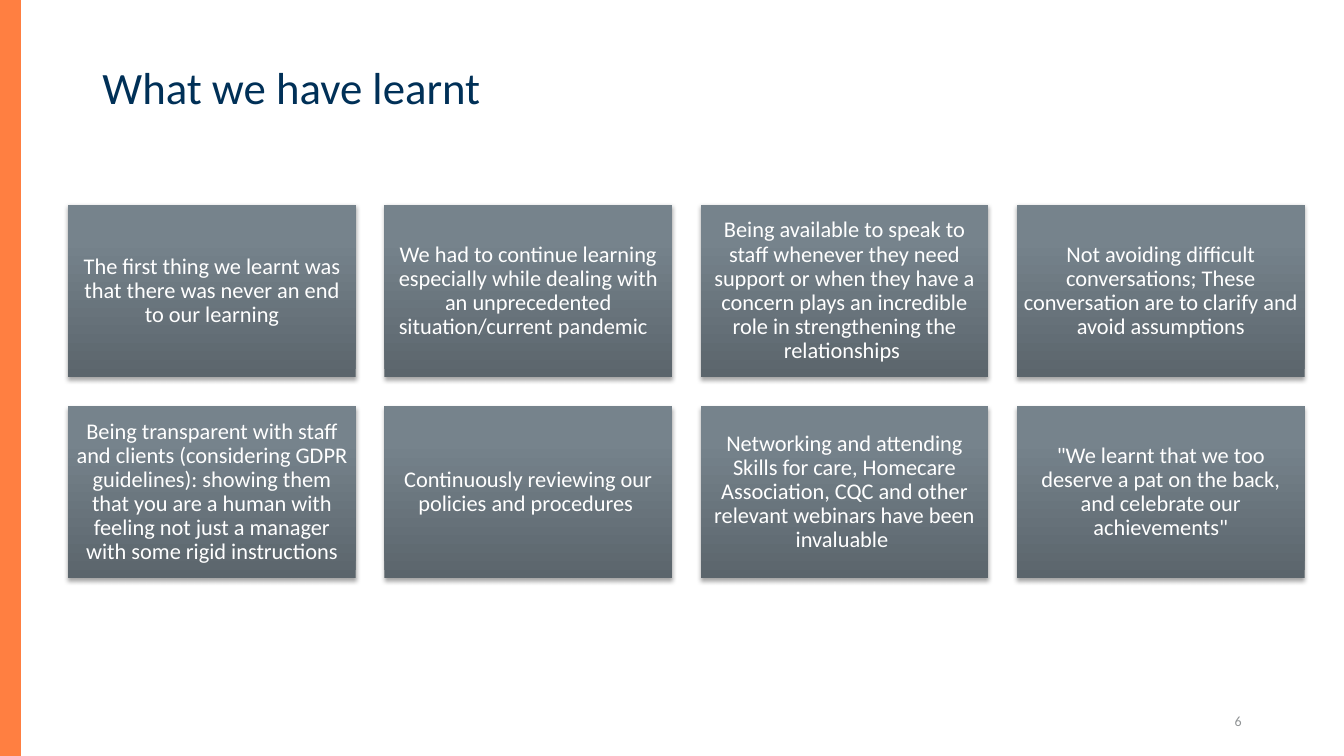
import dataclasses
import pptx
import pptx.dml.color
import pptx.enum.shapes
import pptx.enum.text
import pptx.oxml
import pptx.oxml.ns
import pptx.util

Pt = pptx.util.Pt
RGB = pptx.dml.color.RGBColor.from_string
ALIGN = pptx.enum.text.PP_ALIGN
MIDDLE = pptx.enum.text.MSO_ANCHOR.MIDDLE
RECTANGLE = pptx.enum.shapes.MSO_SHAPE.RECTANGLE


@dataclasses.dataclass(frozen=True)
class Theme:
    font: str = "Calibri"
    accent: str = "FF7F41"
    title: str = "003057"
    number: str = "909395"
    card_text: str = "FFFFFF"
    card_bottom: str = "5B656C"
    card_top: str = "76838C"
    shadow: str = "000000"
    title_size: int = 32
    card_size: int = 16
    number_size: int = 10


theme = Theme()


def write(box, text, size, color, alignment, line_spacing=None):
    frame = box.text_frame
    frame.word_wrap = True
    frame.vertical_anchor = MIDDLE
    frame.text = text
    para = frame.paragraphs[0]
    para.alignment = alignment
    para.line_spacing = line_spacing
    para.font.name = theme.font
    para.font.size = Pt(size)
    para.font.color.rgb = RGB(color)


def add_shadow(shape):
    shape.shadow.inherit = False
    effects = shape._element.spPr.find(pptx.oxml.ns.qn("a:effectLst"))
    effects.append(pptx.oxml.parse_xml(
        f'<a:outerShdw {pptx.oxml.ns.nsdecls("a")} blurRad="{Pt(3.1)}" '
        f'dist="{Pt(1.8)}" dir="5400000" rotWithShape="0">'
        f'<a:srgbClr val="{theme.shadow}"><a:alpha val="35000"/></a:srgbClr>'
        '</a:outerShdw>'))


deck = pptx.Presentation()
deck.slide_width, deck.slide_height = Pt(960), Pt(540)
page = deck.slides.add_slide(deck.slide_layouts[5])

bar = page.shapes.add_shape(RECTANGLE, Pt(0), Pt(0), Pt(15), Pt(540))
bar.shadow.inherit = False
bar.fill.solid()
bar.fill.fore_color.rgb = RGB(theme.accent)
bar.line.fill.background()

title = page.shapes.title
title.left, title.top, title.width, title.height = Pt(66), Pt(28.75), Pt(828), Pt(71)
write(title, "What we have learnt ", theme.title_size, theme.title, ALIGN.LEFT, 0.9)

number = page.shapes.add_textbox(Pt(678), Pt(500.5), Pt(216), Pt(28.75))
write(number, "6", theme.number_size, theme.number, ALIGN.RIGHT)
number.text_frame.paragraphs[0].space_after = Pt(6)

lessons = [
    "The first thing we learnt was that there was never an end to our learning",
    "We had to continue learning especially while dealing with an unprecedented "
    "situation/current pandemic  ",
    "Being available to speak to staff whenever they need support or when they have "
    "a concern plays an incredible role in strengthening the relationships ",
    "Not avoiding difficult conversations; These conversation are to clarify and "
    "avoid assumptions",
    "Being transparent with staff and clients (considering GDPR guidelines): showing "
    "them that you are a human with feeling not just a manager with some rigid "
    "instructions",
    "Continuously reviewing our policies and procedures ",
    "Networking and attending Skills for care, Homecare Association, CQC and other "
    "relevant webinars have been invaluable ",
    '"We learnt that we too deserve a pat on the back, and celebrate our achievements"',
]

columns = 4
grid_left, grid_top = 48.75, 146.3
card_width, card_height, gap = 205.4, 123.2, 20.5

for index, lesson in enumerate(lessons):
    row, column = divmod(index, columns)
    card = page.shapes.add_shape(
        RECTANGLE,
        Pt(grid_left + column * (card_width + gap)),
        Pt(grid_top + row * (card_height + gap)),
        Pt(card_width), Pt(card_height))
    card.fill.gradient()
    card.fill.gradient_angle = 90
    stops = zip(card.fill.gradient_stops, (0, 0.8), (theme.card_bottom, theme.card_top))
    for stop, position, color in stops:
        stop.position = position
        stop.color.rgb = RGB(color)
    card.line.fill.background()
    add_shadow(card)
    frame = card.text_frame
    frame.margin_left = frame.margin_right = Pt(4.8)
    frame.margin_top = frame.margin_bottom = Pt(4.8)
    write(card, lesson, theme.card_size, theme.card_text, ALIGN.CENTER, 0.9)

deck.save("out.pptx")
